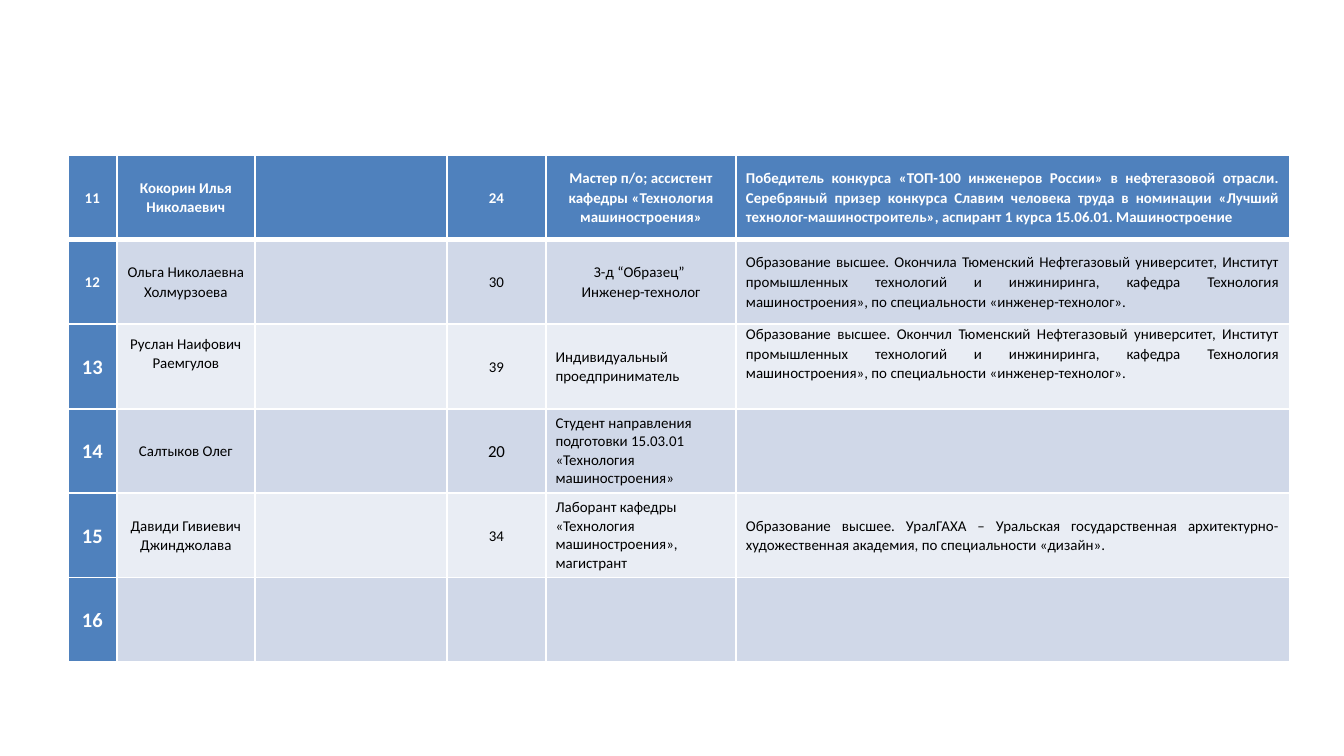
import pptx
import pptx.dml.color
import pptx.enum.text
import pptx.oxml
import pptx.oxml.ns
import pptx.util
from pptx.util import Pt

COLORS = {
    "accent": "4F81BD",
    "band_dark": "D0D8E8",
    "band_light": "E9EDF4",
    "white": "FFFFFF",
    "black": "000000",
}
CENTER = pptx.enum.text.PP_ALIGN.CENTER
JUSTIFY = pptx.enum.text.PP_ALIGN.JUSTIFY
LEFT = pptx.enum.text.PP_ALIGN.LEFT

COLUMN_WIDTHS = [26.3, 74, 103, 52.9, 102, 296.3]
ROW_HEIGHT = 45.2
NUMBER, NAME, PHOTO, AGE, POSITION, DETAILS = range(6)

# Number, name, photo, age, position, details
PEOPLE = [
    ("11", "Кокорин Илья Николаевич", "", "24",
     "Мастер п/о; ассистент кафедры «Технология машиностроения»",
     "Победитель конкурса «ТОП-100 инженеров России» в нефтегазовой отрасли. "
     "Серебряный призер конкурса Славим человека труда в номинации «Лучший "
     "технолог-машиностроитель», аспирант 1 курса 15.06.01. Машиностроение"),
    ("12", "Ольга Николаевна Холмурзоева", "", "30",
     "З-д “Образец” \nИнженер-технолог",
     "Образование высшее. Окончила Тюменский Нефтегазовый университет, Институт "
     "промышленных технологий и инжиниринга, кафедра Технология "
     "машиностроения», по специальности «инженер-технолог»."),
    ("13", "Руслан Наифович Раемгулов", "", "39",
     "Индивидуальный проедприниматель",
     "Образование высшее. Окончил Тюменский Нефтегазовый университет, Институт "
     "промышленных технологий и инжиниринга, кафедра Технология "
     "машиностроения», по специальности «инженер-технолог»."),
    ("14", "Салтыков Олег", "", "20",
     "Студент направления подготовки 15.03.01\n«Технология машиностроения»", ""),
    ("15", "Давиди Гивиевич Джинджолава", "", "34",
     "Лаборант кафедры «Технология машиностроения»,\nмагистрант",
     "Образование высшее. УралГАХА – Уральская государственная "
     "архитектурно-художественная академия, по специальности «дизайн»."),
    ("16", "", "", "", "", ""),
]
POSITION_ALIGNMENTS = [CENTER, CENTER, JUSTIFY, LEFT, LEFT, LEFT]


class SlideBuilder:
    """Holds the style and the current slide."""

    def __init__(self, slide, font="Calibri"):
        self.slide = slide
        self.font = font

    def color(self, name):
        return pptx.dml.color.RGBColor.from_string(COLORS[name])

    def table(self, left, top, column_widths, row_count, row_height):
        frame = self.slide.shapes.add_table(
            row_count, len(column_widths), Pt(left), Pt(top),
            Pt(sum(column_widths)), Pt(row_count * row_height))
        table = frame.table
        table.first_row = table.horz_banding = False
        for column, width in zip(table.columns, column_widths):
            column.width = Pt(width)
        for row in table.rows:
            row.height = Pt(row_height)
        return table

    def borders(self, cell, top=1, bottom=1):
        properties = cell._tc.get_or_add_tcPr()
        for side, width in (("L", 1), ("R", 1), ("T", top), ("B", bottom)):
            properties.append(pptx.oxml.parse_xml(
                f'<a:ln{side} {pptx.oxml.ns.nsdecls("a")} w="{Pt(width)}">'
                f'<a:solidFill><a:srgbClr val="{COLORS["white"]}"/></a:solidFill>'
                f'</a:ln{side}>'))

    def cell(self, cell, text, fill, color, size=8, bold=False,
             alignment=CENTER, spacing=1.07, bottom_margin=0):
        cell.fill.solid()
        cell.fill.fore_color.rgb = self.color(fill)
        cell.vertical_anchor = pptx.enum.text.MSO_ANCHOR.MIDDLE
        cell.margin_left = cell.margin_right = Pt(5.2)
        cell.margin_top = 0
        cell.margin_bottom = Pt(bottom_margin)
        cell.text_frame.text = text
        for paragraph in cell.text_frame.paragraphs:
            paragraph.alignment = alignment
            paragraph.line_spacing = spacing
            paragraph.font.size = Pt(size)
            for run in paragraph.runs:
                run.font.name = self.font
                run.font.size = Pt(size)
                run.font.bold = bold
                run.font.color.rgb = self.color(color)


def main():
    presentation = pptx.Presentation()
    presentation.slide_width = Pt(720)
    presentation.slide_height = Pt(405)
    slide = presentation.slides.add_slide(presentation.slide_layouts[6])
    builder = SlideBuilder(slide)

    # Staff table
    table = builder.table(36.3, 83.1, COLUMN_WIDTHS, len(PEOPLE), ROW_HEIGHT)
    for row, person in enumerate(PEOPLE):
        band = "band_dark" if row % 2 else "band_light"
        for column, text in enumerate(person):
            cell = table.cell(row, column)
            builder.borders(cell, top=3 if row == 1 else 1,
                            bottom=3 if row == 0 else 1)

            # The first row and the number column are accented
            accented = row == 0 or column == NUMBER
            size = 8
            if column == NUMBER and row >= 2:
                size = 11
            elif column == AGE and text == "20":
                size = 9

            alignment = CENTER
            if column == POSITION:
                alignment = POSITION_ALIGNMENTS[row]
            elif column == DETAILS:
                alignment = JUSTIFY

            # Name and details of the third person sit above the middle
            raised = row == 2 and column in (NAME, DETAILS)
            builder.cell(
                cell, text,
                fill="accent" if accented else band,
                color="white" if accented else "black",
                size=size, bold=accented, alignment=alignment,
                spacing=1 if alignment == LEFT else 1.07,
                bottom_margin=14 if raised else 0)

    presentation.save("out.pptx")


if __name__ == "__main__":
    main()
